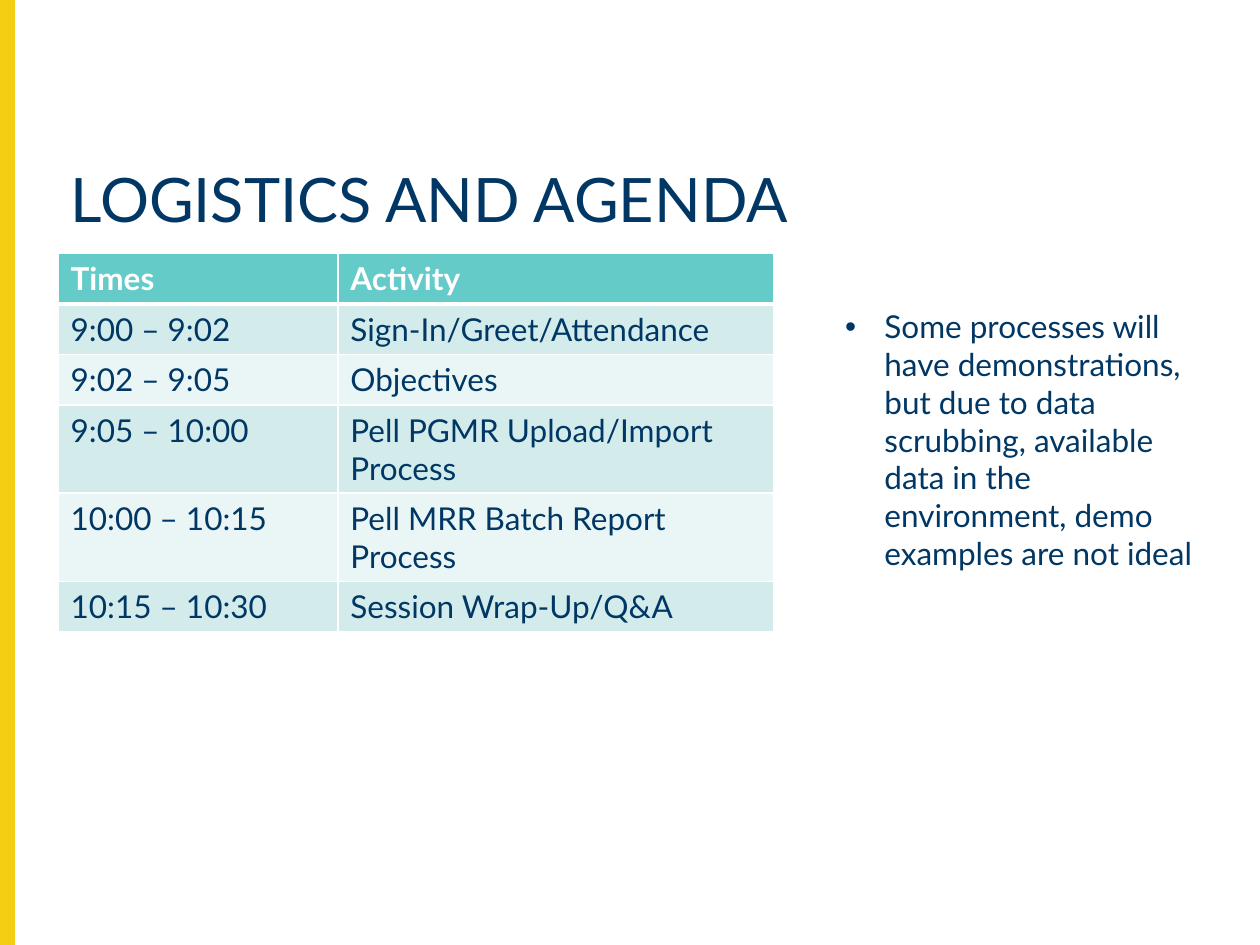
"""Build the logistics and agenda slide with its schedule table and a side note."""
from lxml import etree
from pptx import Presentation
from pptx.dml.color import RGBColor
from pptx.enum.shapes import MSO_SHAPE
from pptx.enum.text import MSO_ANCHOR, MSO_AUTO_SIZE, PP_ALIGN
from pptx.oxml.ns import qn
from pptx.util import Cm, Pt

RECTANGLE = MSO_SHAPE.RECTANGLE
TOP = MSO_ANCHOR.TOP
LEFT = PP_ALIGN.LEFT
NO_AUTOFIT = MSO_AUTO_SIZE.NONE

COLORS = {
    "navy": "003764",
    "yellow": "F4CE12",
    "teal": "65CBC9",
    "band_dark": "D3ECEB",
    "band_light": "EAF6F5",
    "white": "FFFFFF",
}
AGENDA = [
    ("Times", "Activity"),
    ("9:00 – 9:02", "Sign-In/Greet/Attendance"),
    ("9:02 – 9:05", "Objectives"),
    ("9:05 – 10:00", "Pell PGMR Upload/Import Process"),
    ("10:00 – 10:15", "Pell MRR Batch Report Process"),
    ("10:15 – 10:30", "Session Wrap-Up/Q&A"),
]
COLUMN_WIDTHS = [5.64, 8.79]
ROW_HEIGHT = 0.94


def write(frame, text, color, size, bold=False):
    paragraph = frame.paragraphs[0]
    paragraph.alignment = LEFT
    run = paragraph.add_run()
    run.text = text
    for name, value in {"name": "Lato", "size": Pt(size), "bold": bold}.items():
        setattr(run.font, name, value)
    run.font.color.rgb = RGBColor.from_string(COLORS[color])
    return paragraph


def add_border(cell, side, points):
    line = etree.Element(qn(f"a:ln{side}"), w=str(Pt(points)))
    solid = etree.SubElement(line, qn("a:solidFill"))
    etree.SubElement(solid, qn("a:srgbClr"), val=COLORS["white"])
    return line


prs = Presentation()
prs.slide_width, prs.slide_height = Cm(25.4), Cm(19.05)
slide = prs.slides.add_slide(prs.slide_layouts[5])

side_bar = slide.shapes.add_shape(RECTANGLE, 0, 0, Cm(0.28), prs.slide_height)
side_bar.shadow.inherit = False
side_bar.fill.solid()
side_bar.line.width = Pt(1)
for paint in (side_bar.fill.fore_color, side_bar.line.color):
    paint.rgb = RGBColor.from_string(COLORS["yellow"])

title = slide.shapes.title
title_box = {"left": 1.17, "top": 3.3, "width": 23.7, "height": 2.01}
for name, value in title_box.items():
    setattr(title, name, Cm(value))
title_format = {"word_wrap": True, "auto_size": NO_AUTOFIT, "vertical_anchor": TOP}
for name, value in title_format.items():
    setattr(title.text_frame, name, value)
heading = write(title.text_frame, "LOGISTICS AND AGENDA", "navy", 35)
heading.line_spacing = 0.9

schedule = slide.shapes.add_table(
    len(AGENDA), len(COLUMN_WIDTHS), Cm(1.17), Cm(5.11),
    Cm(sum(COLUMN_WIDTHS)), Cm(ROW_HEIGHT * len(AGENDA)),
).table
for column, width in zip(schedule.columns, COLUMN_WIDTHS):
    column.width = Cm(width)
for index, entries in enumerate(AGENDA):
    schedule.rows[index].height = Cm(ROW_HEIGHT)
    is_header = index == 0
    band = "teal" if is_header else ("band_light", "band_dark")[index % 2]
    border_widths = {
        "L": 1, "R": 1, "T": 3 if index == 1 else 1, "B": 3 if is_header else 1,
    }
    for position, entry in enumerate(entries):
        cell = schedule.cell(index, position)
        write(cell.text_frame, entry, "white" if is_header else "navy", 18, is_header)
        cell.fill.solid()
        cell.fill.fore_color.rgb = RGBColor.from_string(COLORS[band])
        borders = [add_border(cell, side, pts) for side, pts in border_widths.items()]
        properties = cell._tc.get_or_add_tcPr()
        for order, border in enumerate(borders):
            properties.insert(order, border)

note = slide.shapes.add_textbox(Cm(16.79), Cm(6.07), Cm(7.72), Cm(5.64))
note.text_frame.word_wrap = True
note_paragraph = write(
    note.text_frame,
    "Some processes will have demonstrations, but due to data scrubbing, "
    "available data in the environment, demo examples are not ideal",
    "navy", 18,
)
indent = Cm(0.79)
note_properties = note_paragraph._p.get_or_add_pPr()
for name, value in {"marL": indent, "indent": -indent}.items():
    note_properties.set(name, str(value))
etree.SubElement(note_properties, qn("a:buFont"), typeface="Arial")
etree.SubElement(note_properties, qn("a:buChar"), char="•")

prs.save("out.pptx")
